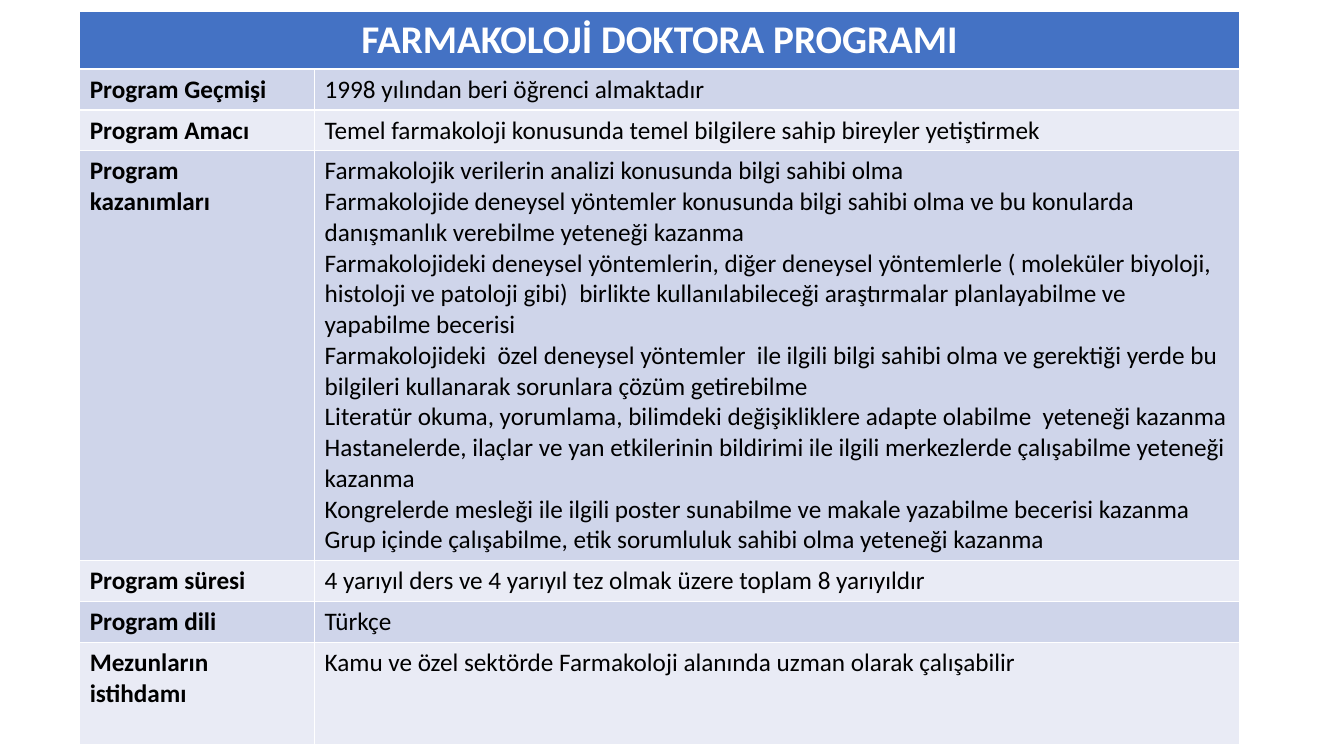
from pptx import Presentation
from pptx.dml.color import RGBColor
from pptx.enum import text
from pptx.util import Inches, Pt

BLUE = RGBColor(0x44, 0x72, 0xC4)
BANDS = [RGBColor(0xCF, 0xD5, 0xEA), RGBColor(0xE9, 0xEB, 0xF5)]
WHITE = RGBColor(0xFF, 0xFF, 0xFF)
BLACK = RGBColor(0, 0, 0)

TITLE = "FARMAKOLOJİ DOKTORA PROGRAMI"
ROWS = [
    ("Program Geçmişi", ["1998 yılından beri öğrenci almaktadır"]),
    ("Program Amacı", ["Temel farmakoloji konusunda temel bilgilere sahip bireyler yetiştirmek"]),
    ("Program kazanımları", [
        "Farmakolojik verilerin analizi konusunda bilgi sahibi olma",
        "Farmakolojide deneysel yöntemler konusunda bilgi sahibi olma ve bu konularda "
        "danışmanlık verebilme yeteneği kazanma",
        "Farmakolojideki deneysel yöntemlerin, diğer deneysel yöntemlerle ( moleküler biyoloji, "
        "histoloji ve patoloji gibi)  birlikte kullanılabileceği araştırmalar planlayabilme ve "
        "yapabilme becerisi",
        "Farmakolojideki  özel deneysel yöntemler  ile ilgili bilgi sahibi olma ve gerektiği yerde bu "
        "bilgileri kullanarak sorunlara çözüm getirebilme",
        "Literatür okuma, yorumlama, bilimdeki değişikliklere adapte olabilme  yeteneği kazanma",
        "Hastanelerde, ilaçlar ve yan etkilerinin bildirimi ile ilgili merkezlerde çalışabilme yeteneği "
        "kazanma",
        "Kongrelerde mesleği ile ilgili poster sunabilme ve makale yazabilme becerisi kazanma",
        "Grup içinde çalışabilme, etik sorumluluk sahibi olma yeteneği kazanma",
    ]),
    ("Program süresi", ["4 yarıyıl ders ve 4 yarıyıl tez olmak üzere toplam 8 yarıyıldır"]),
    ("Program dili", ["Türkçe"]),
    ("Mezunların istihdamı", ["Kamu ve özel sektörde Farmakoloji alanında uzman olarak çalışabilir"]),
]
WIDTHS = [2.33, 9.17]
HEIGHTS = [0.54, 0.38, 0.38, 3.96, 0.38, 0.38, 1.01]


def write(cell, lines, fill, color=BLACK, size=18, bold=False):
    """Fill a cell and give it one paragraph per line."""
    cell.fill.solid()
    cell.fill.fore_color.rgb = fill
    for i, line in enumerate(lines):
        para = cell.text_frame.add_paragraph() if i else cell.text_frame.paragraphs[0]
        run = para.add_run()
        run.text = line
        run.font.name = "Calibri"
        run.font.size = Pt(size)
        run.font.bold = bold
        run.font.color.rgb = color


deck = Presentation()
deck.slide_width, deck.slide_height = Inches(13.33), Inches(7.5)
slide = deck.slides.add_slide(deck.slide_layouts[6])

# The default table style supplies the white cell borders.
table = slide.shapes.add_table(
    len(HEIGHTS), len(WIDTHS), Inches(0.79), Inches(0.11),
    Inches(sum(WIDTHS)), Inches(sum(HEIGHTS))).table
for col, width in zip(table.columns, WIDTHS):
    col.width = Inches(width)
for row, height in zip(table.rows, HEIGHTS):
    row.height = Inches(height)

head = table.cell(0, 0)
head.merge(table.cell(0, 1))
write(head, [TITLE], BLUE, WHITE, 28, True)
head.text_frame.paragraphs[0].alignment = text.PP_ALIGN.CENTER

for i, (label, lines) in enumerate(ROWS):
    band = BANDS[i % 2]
    write(table.cell(i + 1, 0), [label], band, bold=True)
    write(table.cell(i + 1, 1), lines, band)

deck.save("out.pptx")
